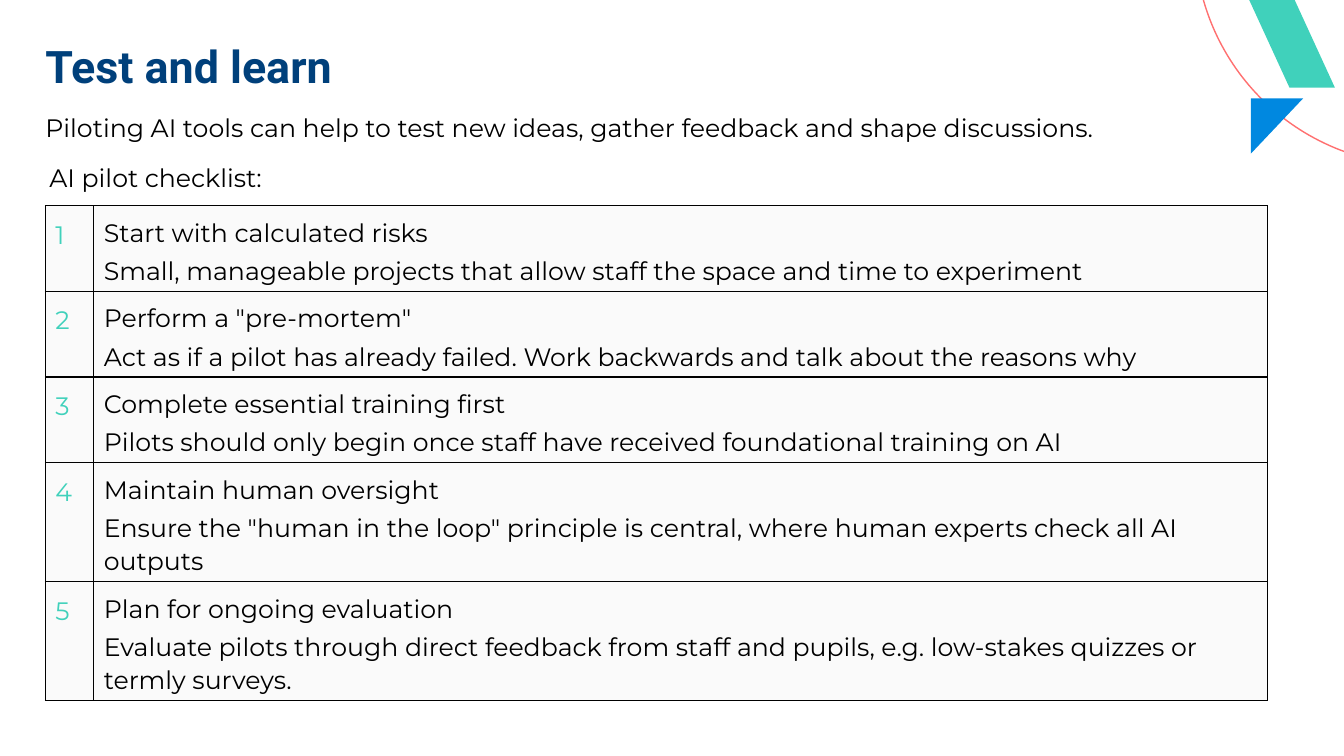
from lxml import etree
from pptx import Presentation
from pptx.dml.color import RGBColor
from pptx.enum.shapes import MSO_SHAPE
from pptx.oxml import parse_xml
from pptx.oxml.ns import nsdecls, qn
from pptx.util import Inches, Pt

ARC = MSO_SHAPE.ARC
WEDGE = MSO_SHAPE.RIGHT_TRIANGLE
SLANT = MSO_SHAPE.PARALLELOGRAM
NAVY = RGBColor(0x00, 0x40, 0x7B)
BLUE = RGBColor(0x00, 0x88, 0xE0)
TEAL = RGBColor(0x40, 0xD1, 0xBB)
CORAL = RGBColor(0xFF, 0x70, 0x70)
GREY = RGBColor(0xF9, 0xF9, 0xF9)
BLACK = RGBColor(0, 0, 0)
WHITE = RGBColor(0xFF, 0xFF, 0xFF)

STEPS = [
    ("Start with calculated risks",
     "Small, manageable projects that allow staff the space and time to experiment"),
    ('Perform a "pre-mortem"',
     "Act as if a pilot has already failed. Work backwards and talk about the reasons why"),
    ("Complete essential training first",
     "Pilots should only begin once staff have received foundational training on AI"),
    ("Maintain human oversight",
     'Ensure the "human in the loop" principle is central, where human experts check all AI outputs'),
    ("Plan for ongoing evaluation",
     "Evaluate pilots through direct feedback from staff and pupils, "
     "e.g. low-stakes quizzes or termly surveys."),
]
HEIGHTS = [0.85, 0.85, 0.85, 1.18, 1.18]


def style(para, color, size=18, face="Montserrat", bold=False):
    para.font.name = face
    para.font.size = Pt(size)
    para.font.bold = bold
    para.font.color.rgb = color


def dress(cell):
    """Give a cell its margins, translucent fill and black borders."""
    cell.margin_left = cell.margin_right = Inches(0.1)
    cell.margin_top, cell.margin_bottom = Inches(0.12), Inches(0.05)
    cell.fill.solid()
    cell.fill.fore_color.rgb = GREY
    props = cell._tc.tcPr
    tint = props.find(".//" + qn("a:srgbClr"))
    etree.SubElement(tint, qn("a:alpha")).set("val", "71000")
    for spot, side in enumerate("LRTB"):
        props.insert(spot, parse_xml(
            f'<a:ln{side} {nsdecls("a")} w="12700"><a:solidFill>'
            f'<a:srgbClr val="{BLACK}"/></a:solidFill></a:ln{side}>'))


deck = Presentation()
deck.slide_width, deck.slide_height = Inches(13.33), Inches(7.5)
slide = deck.slides.add_slide(deck.slide_layouts[6])
slide.background.fill.solid()
slide.background.fill.fore_color.rgb = WHITE
shapes = slide.shapes

# Corner decoration
arc = shapes.add_shape(ARC, Inches(11.85), Inches(-2.87), Inches(4.51), Inches(4.51))
arc.shadow.inherit = False
arc.fill.background()
arc.line.color.rgb = CORAL
arc.line.width = Pt(1)
for index, angle in enumerate((108, 165)):
    arc.adjustments[index] = angle * 0.6

wedge = shapes.add_shape(WEDGE, Inches(12.39), Inches(0.99), Inches(0.55), Inches(0.52))
wedge.rotation = 90
slant = shapes.add_shape(SLANT, Inches(12.39), Inches(0), Inches(0.85), Inches(0.87))
slant.adjustments[0] = 0.47
slant._element.spPr.xfrm.set("flipH", "1")
for shape, color in ((wedge, BLUE), (slant, TEAL)):
    shape.shadow.inherit = False
    shape.fill.solid()
    shape.fill.fore_color.rgb = color
    shape.line.fill.background()

# Title, lead sentence and table label
for text, left, top, width, height, look in (
    ("Test and learn", 0.45, 0.44, 11.4, 0.67, (NAVY, 32, "Roboto", True)),
    ("Piloting AI tools can help to test new ideas, gather feedback and shape discussions.",
     0.45, 1.11, 11.76, 0.4, (BLACK,)),
    ("AI pilot checklist:", 0.49, 1.61, 2.4, 0.4, (BLACK,)),
):
    box = shapes.add_textbox(Inches(left), Inches(top), Inches(width), Inches(height))
    frame = box.text_frame
    frame.word_wrap = True
    frame.margin_left = frame.margin_right = 0
    frame.margin_top = frame.margin_bottom = 0
    para = frame.paragraphs[0]
    para.text = text
    style(para, *look)
    if para.font.bold:
        para.line_spacing = 0.9

# Checklist
table = shapes.add_table(len(STEPS), 2, Inches(0.45), Inches(2.04),
                         Inches(12.12), Inches(sum(HEIGHTS))).table
table.first_row = table.horz_banding = False
table.columns[0].width, table.columns[1].width = Inches(0.48), Inches(11.64)
for row, ((head, detail), height) in enumerate(zip(STEPS, HEIGHTS)):
    table.rows[row].height = Inches(height)
    count, step = table.cell(row, 0), table.cell(row, 1)
    dress(count)
    dress(step)

    para = count.text_frame.paragraphs[0]
    para.text = str(row + 1)
    para.line_spacing = 1.07
    para.space_after = Pt(8)
    style(para, TEAL)

    step.text = f"{head}\n{detail}"
    for para in step.text_frame.paragraphs:
        para.space_after = Pt(2)
        style(para, BLACK)
    para.space_before = Pt(2)
    para.line_spacing = 1.07

deck.save("out.pptx")
